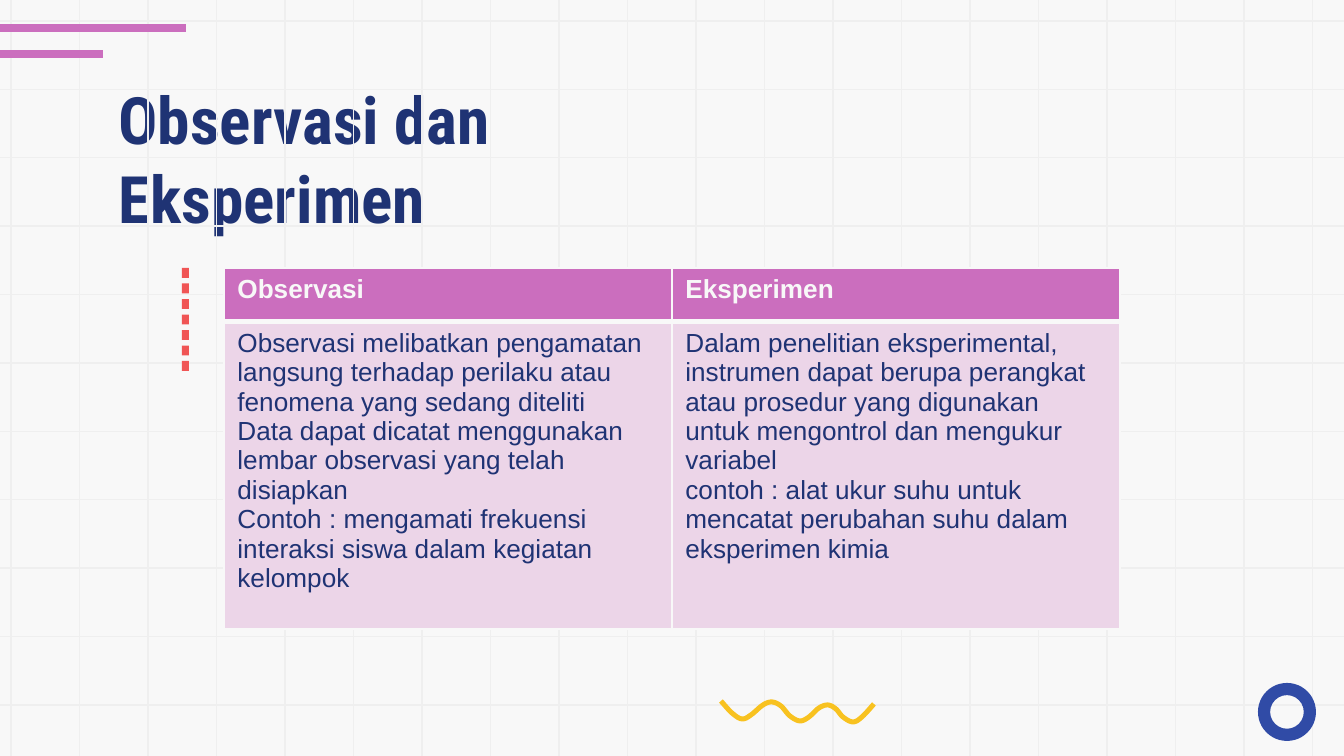
from math import hypot

from lxml.etree import SubElement
from pptx import Presentation
from pptx.dml.color import RGBColor
from pptx.enum.shapes import MSO_CONNECTOR as Connector, MSO_SHAPE as Shape
from pptx.enum.text import MSO_ANCHOR as Anchor, MSO_AUTO_SIZE as AutoSize, PP_ALIGN as Align
from pptx.oxml.ns import qn
from pptx.util import Pt

PX = 914400 / 134.4
WIDTH, HEIGHT = 1344, 756
COLORS = {
    "paper": "F8F8F8",
    "grid": "EFEFEF",
    "pink": "CB6EBE",
    "blush": "ECD5E8",
    "navy": "1F3374",
    "blue": "304BA6",
    "yellow": "F8C220",
    "red": "F05555",
}
HEADINGS = ["Observasi", "Eksperimen"]
EXPLANATIONS = [
    [
        "Observasi melibatkan pengamatan langsung terhadap perilaku atau fenomena yang sedang diteliti",
        "Data dapat dicatat menggunakan lembar observasi yang telah disiapkan",
        "Contoh : mengamati frekuensi interaksi siswa dalam kegiatan kelompok",
    ],
    [
        "Dalam penelitian eksperimental, instrumen dapat berupa perangkat atau prosedur yang digunakan "
        "untuk mengontrol dan mengukur variabel",
        "contoh : alat ukur suhu untuk mencatat perubahan suhu dalam eksperimen kimia",
    ],
]
WAVE_KNOTS = [(2, 2), (13, 14), (23, 20), (32, 16), (44, 6), (53, 3), (62, 7), (71, 17), (81, 22),
              (90, 18), (100, 9), (109, 6), (117, 10), (124, 18), (134, 23), (143, 18), (155, 5)]


def emu(px):
    """Turn a length in px into EMU."""
    return round(px * PX)


def rgb(name):
    """Return the palette colour of that name."""
    return RGBColor.from_string(COLORS[name])


def paint(shape, color):
    """Give a shape a plain fill without outline or shadow."""
    shape.shadow.inherit = False
    shape.fill.solid()
    shape.fill.fore_color.rgb = rgb(color)
    shape.line.fill.background()


def add_figure(slide, kind, box, color):
    """Place a filled preset shape in a box."""
    figure = slide.shapes.add_shape(kind, *map(emu, box))
    paint(figure, color)
    return figure


def write(frame, paragraphs, font="Arial", size=14, color="navy", bold=False):
    """Write formatted paragraphs into a text frame."""
    for index, words in enumerate(paragraphs):
        paragraph = frame.add_paragraph() if index else frame.paragraphs[0]
        paragraph.alignment = Align.LEFT
        run = paragraph.add_run()
        run.text = words
        run.font.name, run.font.size, run.font.bold = font, Pt(size), bold
        run.font.color.rgb = rgb(color)


def add_grid_line(slide, start, end):
    """Draw one pale line of the background grid."""
    line = slide.shapes.add_connector(Connector.STRAIGHT, *map(emu, start + end))
    line.line.color.rgb = rgb("grid")
    line.line.width = Pt(0.75)
    SubElement(line._element.spPr, qn("a:effectLst"))


def add_grid(slide, box):
    """Cover a box with evenly spaced grid lines."""
    left, top, width, height = box
    for row in range(11):
        y = top + 21 + row * 68.4
        add_grid_line(slide, (left + width, y), (left, y))
    for column in range(20):
        x = left + 11 + column * 68.5
        add_grid_line(slide, (x, top), (x, top + height))


def add_bars(slide, box):
    """Place the two corner bars at the top and bottom of a box."""
    left, top, width, height = box
    add_figure(slide, Shape.RECTANGLE, (left, top, width, 8), "pink")
    add_figure(slide, Shape.RECTANGLE, (left, top + height - 8, 103, 8), "pink")


def add_ring(slide, box):
    """Place the blue ring."""
    ring = add_figure(slide, Shape.DONUT, box, "blue")
    ring.adjustments[0] = 0.21


def smooth(knots, steps=6):
    """Return points along a Catmull-Rom curve through the knots."""
    padded = [knots[0], *knots, knots[-1]]
    points = []
    for a, b, c, d in zip(padded, padded[1:], padded[2:], padded[3:]):
        for step in range(steps):
            t = step / steps
            points.append(tuple(
                (2 * q + (r - p) * t + (2 * p - 5 * q + 4 * r - s) * t ** 2
                 + (3 * q - p - 3 * r + s) * t ** 3) / 2
                for p, q, r, s in zip(a, b, c, d)))
    return points + [knots[-1]]


def add_wave(slide, box, thickness=5):
    """Draw the yellow wave as a ribbon around its centre curve."""
    left, top, *_ = box
    curve = smooth(WAVE_KNOTS)
    upper, lower = [], []
    for before, (x, y), after in zip([curve[0], *curve], curve, [*curve[1:], curve[-1]]):
        dx, dy = after[0] - before[0], after[1] - before[1]
        reach = thickness / 2 / hypot(dx, dy)
        upper.append((emu(left + x + dy * reach), emu(top + y - dx * reach)))
        lower.append((emu(left + x - dy * reach), emu(top + y + dx * reach)))
    outline = upper + lower[::-1]
    builder = slide.shapes.build_freeform(*outline[0])
    builder.add_line_segments(outline[1:], close=True)
    paint(builder.convert_to_shape(), "yellow")


def add_title(slide, box):
    """Fill and place the title placeholder."""
    title = slide.shapes.title
    title.left, title.top, title.width, title.height = map(emu, box)
    frame = title.text_frame
    frame.word_wrap, frame.auto_size = True, AutoSize.NONE
    frame.vertical_anchor = Anchor.BOTTOM
    frame.margin_left = frame.margin_right = frame.margin_top = frame.margin_bottom = Pt(7.2)
    write(frame, ["Observasi dan Eksperimen"], font="Roboto Condensed", size=35, bold=True)


def add_dashes(slide, box, count=7, dash=10):
    """Stack equal red dashes down a box."""
    left, top, width, height = box
    pitch = (height - dash) / (count - 1)
    for index in range(count):
        add_figure(slide, Shape.RECTANGLE, (left, top + index * pitch, width, dash), "red")


def set_borders(cell, **widths):
    """Give a cell paper-coloured borders, with widths in points by side."""
    properties = cell._tc.get_or_add_tcPr()
    for side in "LRTB":
        border = SubElement(properties, qn(f"a:ln{side}"), w=str(Pt(widths.get(side, 1))))
        SubElement(SubElement(border, qn("a:solidFill")), qn("a:srgbClr"), val=COLORS["paper"])


def fill_cell(cell, paragraphs, fill, borders, **style):
    """Set the borders, fill and text of a table cell."""
    set_borders(cell, **borders)
    cell.fill.solid()
    cell.fill.fore_color.rgb = rgb(fill)
    write(cell.text_frame, paragraphs, **style)


def add_comparison(slide, box, header=54):
    """Build the table that compares the two methods."""
    table = slide.shapes.add_table(2, 2, *map(emu, box)).table
    table.rows[0].height, table.rows[1].height = emu(header), emu(box[3] - header)
    for column, (heading, explanation) in enumerate(zip(HEADINGS, EXPLANATIONS)):
        table.columns[column].width = emu(box[2] / 2)
        fill_cell(table.cell(0, column), [heading], "pink", {"B": 3}, color="paper", bold=True)
        fill_cell(table.cell(1, column), explanation, "blush", {"T": 3})


def main():
    """Build and save the slide."""
    deck = Presentation()
    deck.slide_width, deck.slide_height = emu(WIDTH), emu(HEIGHT)
    slide = deck.slides.add_slide(deck.slide_layouts[5])
    slide.background.fill.solid()
    slide.background.fill.fore_color.rgb = rgb("paper")
    add_grid(slide, (0, 0, WIDTH, HEIGHT))
    add_bars(slide, (0, 24, 186, 34))
    add_ring(slide, (1258, 683, 58, 58))
    add_wave(slide, (719, 699, 157, 25))
    add_title(slide, (105, 86, 517, 164))
    add_dashes(slide, (182, 268, 7, 103))
    add_comparison(slide, (224, 268, 896, 361))
    deck.save("out.pptx")


if __name__ == "__main__":
    main()
